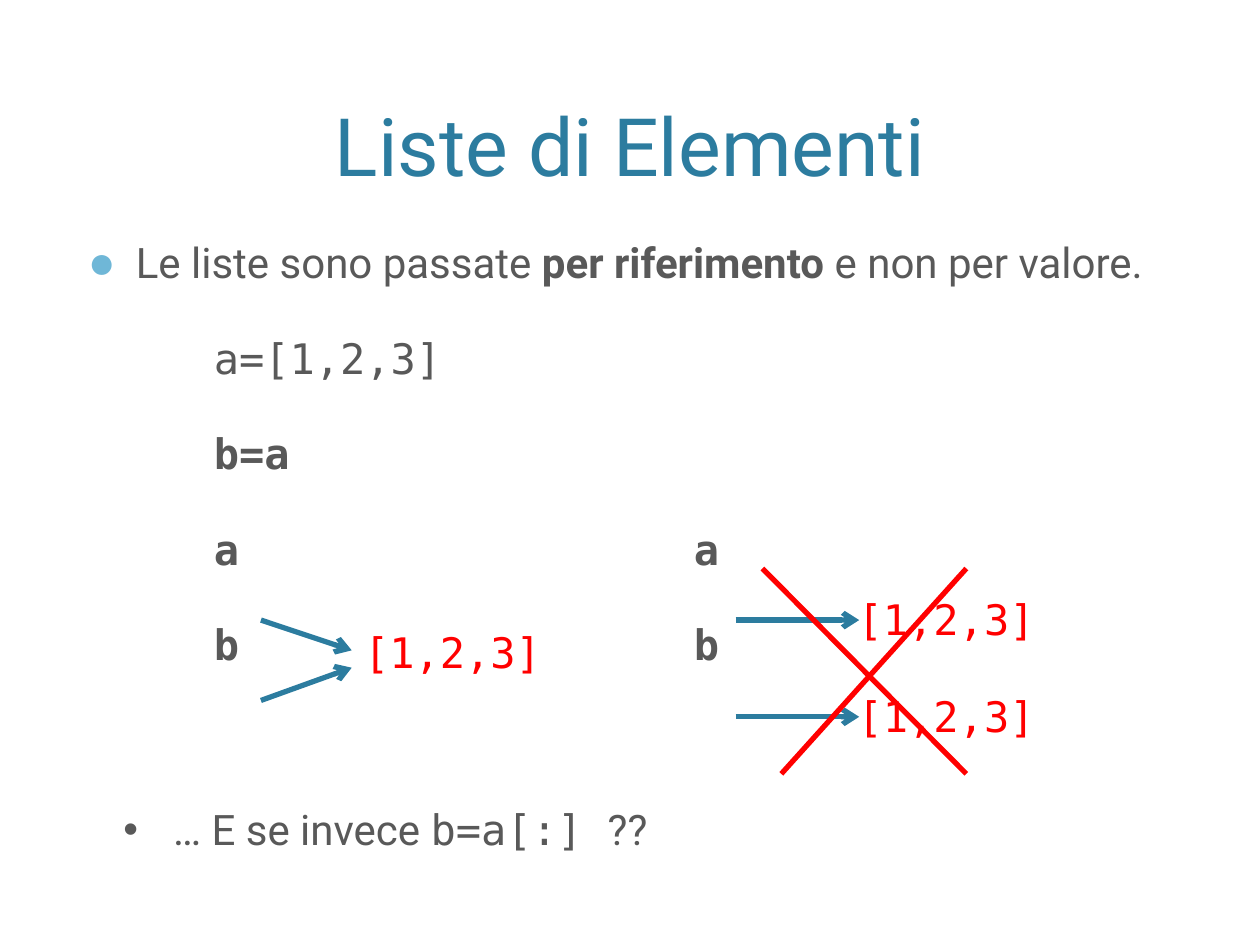
from dataclasses import dataclass

from lxml.etree import SubElement
from pptx import Presentation
from pptx.dml.color import RGBColor
from pptx.enum.shapes import MSO_CONNECTOR as Connector
from pptx.enum.text import MSO_ANCHOR as Anchor, MSO_AUTO_SIZE as AutoSize, PP_ALIGN as Align
from pptx.oxml.ns import qn
from pptx.util import Cm, Pt

BLUE, LIGHT_BLUE, GREY, RED = "2C7C9F", "6FB7D7", "595959", "FF0000"
SANS, MONO = "Roboto", "DejaVu Sans Mono"
TAB_STOPS = (2.54, 12.22)
BODY_FORMAT = {"line_spacing": 1.2, "space_before": Pt(20)}


@dataclass
class Span:
    text: str
    font: str = SANS
    color: str = GREY
    size: int = 24
    bold: bool = False


@dataclass
class Bullet:
    char: str
    indent: float
    color: str = GREY
    percent: int = 100


@dataclass
class Line:
    start: tuple[float, float]
    end: tuple[float, float]
    color: str = BLUE
    arrow: bool = True


def paint(target, color: str) -> None:
    target.rgb = RGBColor.from_string(color)


def apply_format(target, values: dict) -> None:
    for name, value in values.items():
        setattr(target, name, value)


def add_box(page, left: float, top: float, width: float, height: float, **values):
    box = page.shapes.add_textbox(Cm(left), Cm(top), Cm(width), Cm(height))
    apply_format(box.text_frame, {"word_wrap": True, **values})
    return box.text_frame


def write(para, spans: list[Span], **values) -> None:
    apply_format(para, values)
    for span in spans:
        run = para.add_run()
        run.text = span.text
        apply_format(run.font, {"name": span.font, "size": Pt(span.size), "bold": span.bold})
        paint(run.font.color, span.color)


def add_bullet(para, bullet: Bullet) -> None:
    props = para._p.get_or_add_pPr()
    props.set("marL", str(Cm(bullet.indent)))
    props.set("indent", str(-Cm(bullet.indent)))
    color = SubElement(props, qn("a:buClr"))
    SubElement(color, qn("a:srgbClr"), val=bullet.color)
    SubElement(props, qn("a:buSzPct"), val=str(bullet.percent * 1000))
    SubElement(props, qn("a:buFont"), typeface="Arial")
    SubElement(props, qn("a:buChar"), char=bullet.char)


def add_tab_stops(para) -> None:
    stops = SubElement(para._p.get_or_add_pPr(), qn("a:tabLst"))
    for position in TAB_STOPS:
        SubElement(stops, qn("a:tab"), pos=str(Cm(position)), algn="l")


def draw_line(page, line: Line) -> None:
    ends = [Cm(value) for value in (*line.start, *line.end)]
    connector = page.shapes.add_connector(Connector.STRAIGHT, *ends)
    connector.line.width = Pt(3)
    paint(connector.line.color, line.color)
    if line.arrow:
        SubElement(connector.line._get_or_add_ln(), qn("a:tailEnd"), type="arrow")
    SubElement(connector._element.spPr, qn("a:effectLst"))


def main() -> None:
    deck = Presentation()
    deck.slide_width, deck.slide_height = Cm(25.4), Cm(19.05)
    page = deck.slides.add_slide(deck.slide_layouts[6])

    # Title
    title = add_box(page, 1.52, 0.3, 22.35, 3.71, vertical_anchor=Anchor.BOTTOM)
    write(title.paragraphs[0], [Span("Liste di Elementi", color=BLUE, size=46)],
          alignment=Align.CENTER)

    # Statement and code lines
    body = add_box(page, 1.52, 4.45, 22.35, 12.07)
    statement = body.paragraphs[0]
    write(statement, [Span("Le liste sono passate "),
                      Span("per riferimento ", bold=True),
                      Span("e non per valore.")], **BODY_FORMAT)
    add_bullet(statement, Bullet("●", 0.97, LIGHT_BLUE, 110))
    for code, bold in (("a=[1,2,3]", False), ("b=a", True), ("a\ta", True), ("b\tb", True)):
        para = body.add_paragraph()
        write(para, [Span("\t" + code, MONO, bold=bold)], **BODY_FORMAT)
        add_tab_stops(para)

    # List values: one shared, then two separate
    for left, top in ((7.09, 12.5), (17.04, 11.84), (17.04, 13.79)):
        value = add_box(page, left, top, 4.11, 1.27,
                        word_wrap=False, auto_size=AutoSize.SHAPE_TO_FIT_TEXT)
        write(value.paragraphs[0], [Span("[1,2,3]", MONO, RED)])

    # Reference arrows and the cross over the wrong case
    for line in (
        Line((5.26, 12.5), (7.09, 13.11)),
        Line((5.26, 14.12), (7.09, 13.46)),
        Line((14.83, 12.5), (17.32, 12.5)),
        Line((14.83, 14.45), (17.32, 14.45)),
        Line((15.37, 11.46), (19.48, 15.6), RED, arrow=False),
        Line((15.75, 15.6), (19.48, 11.46), RED, arrow=False),
    ):
        draw_line(page, line)

    # Closing question
    question = add_box(page, 2.24, 16.08, 18.19, 1.27,
                       auto_size=AutoSize.SHAPE_TO_FIT_TEXT).paragraphs[0]
    write(question, [Span(" … E se invece "), Span("b=a[:] ", MONO), Span("??")])
    add_bullet(question, Bullet("•", 0.79))

    deck.save("out.pptx")


if __name__ == "__main__":
    main()
